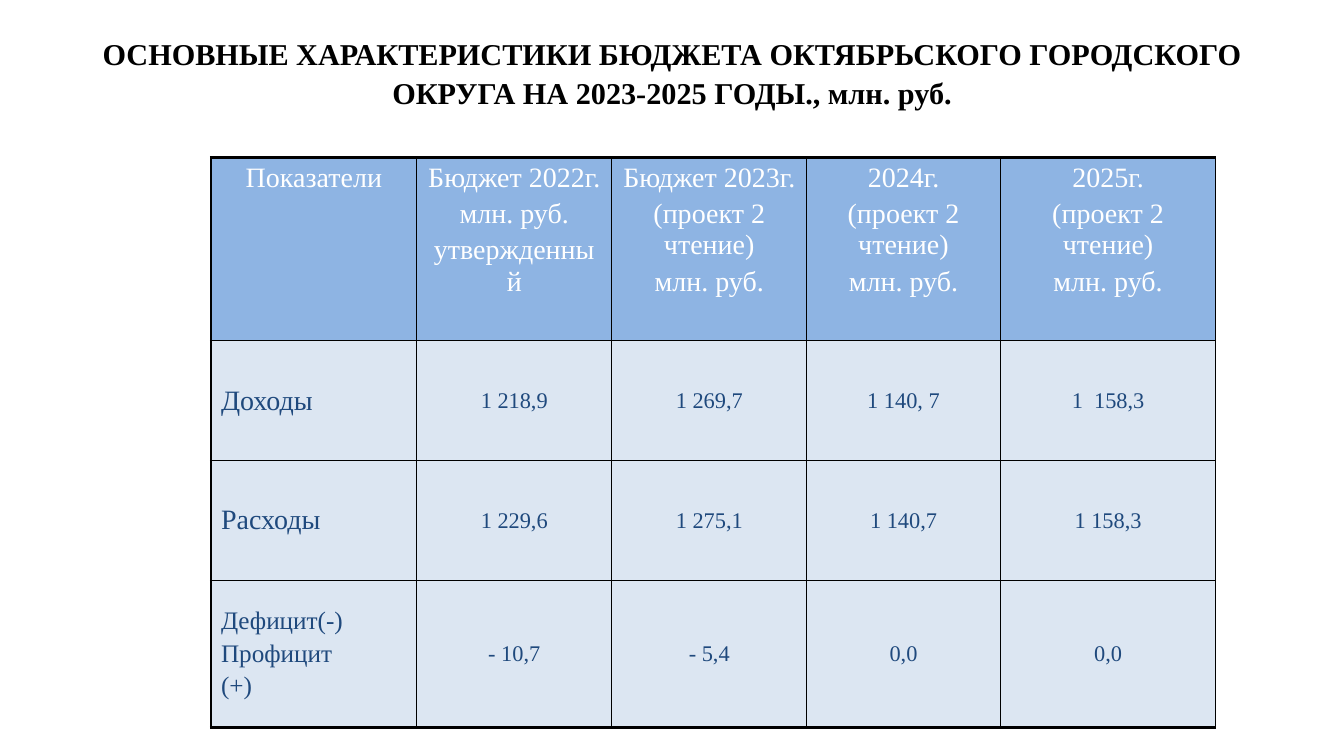
from dataclasses import dataclass

import pptx
import pptx.dml.color
import pptx.enum.text
import pptx.oxml
import pptx.oxml.ns
import pptx.util

Cm = pptx.util.Cm
Pt = pptx.util.Pt
ALIGN = pptx.enum.text.PP_ALIGN
ANCHOR = pptx.enum.text.MSO_ANCHOR


@dataclass(frozen=True)
class Theme:
    font: str = "Times New Roman"
    black: str = "000000"
    white: str = "FFFFFF"
    navy: str = "1F497D"
    header_fill: str = "8EB4E3"
    body_fill: str = "DCE6F2"
    title_size: float = 21.6
    label_size: float = 20
    balance_size: float = 18
    value_size: float = 16
    thin: float = 1
    thick: float = 2.25
    paragraph_gap: float = 0.18  # share of the type size


TITLE = ("ОСНОВНЫЕ ХАРАКТЕРИСТИКИ БЮДЖЕТА ОКТЯБРЬСКОГО ГОРОДСКОГО ОКРУГА "
         "НА 2023-2025 ГОДЫ., млн. руб.")
PROJECT = "\n(проект 2 чтение)\nмлн. руб."
BUDGET_ROWS = [
    ["Показатели", "Бюджет 2022г.\nмлн. руб.\nутвержденный",
     "Бюджет 2023г." + PROJECT, "2024г." + PROJECT, "2025г." + PROJECT],
    ["Доходы", "1 218,9", "1 269,7", "1 140, 7", "1  158,3"],
    ["Расходы", "1 229,6", "1 275,1", "1 140,7", "1 158,3"],
    ["Дефицит(-)\nПрофицит\n(+)", "- 10,7", "- 5,4", "0,0", "0,0"],
]
COLUMN_WIDTHS = [5.18, 4.92, 4.91, 4.88, 5.43]
ROW_HEIGHTS = [4.62, 3.02, 3.01, 3.71]


class SlideBuilder:
    def __init__(self, slide, theme):
        self.slide = slide
        self.theme = theme

    def format_text(self, text_frame, size, color, align, bold=False, gap=0):
        for paragraph in text_frame.paragraphs:
            paragraph.alignment = align
            paragraph.space_before = Pt(size * gap)
            for run in paragraph.runs:
                run.font.name = self.theme.font
                run.font.size = Pt(size)
                run.font.bold = bold
                run.font.color.rgb = pptx.dml.color.RGBColor.from_string(color)

    def add_title(self, text, left, top, width, height):
        box = self.slide.shapes.add_textbox(Cm(left), Cm(top), Cm(width), Cm(height))
        frame = box.text_frame
        frame.word_wrap = True
        frame.vertical_anchor = ANCHOR.MIDDLE
        frame.text = text
        self.format_text(frame, self.theme.title_size, self.theme.black,
                         ALIGN.CENTER, bold=True)
        frame.paragraphs[0].line_spacing = 1.06

    def set_borders(self, cell, widths):
        properties = cell._tc.get_or_add_tcPr()
        for side, width in widths.items():
            properties.append(pptx.oxml.parse_xml(
                f'<a:ln{side} {pptx.oxml.ns.nsdecls("a")} w="{Pt(width)}">'
                f'<a:solidFill><a:srgbClr val="{self.theme.black}"/></a:solidFill>'
                f'</a:ln{side}>'))

    def format_cell(self, cell, row, column, last_row):
        theme = self.theme
        header, label = row == 0, column == 0
        # Heavy rules run along the left, top and bottom of the table
        self.set_borders(cell, {
            "L": theme.thick if label else theme.thin,
            "R": theme.thin,
            "T": theme.thick if header else theme.thin,
            "B": theme.thick if row == last_row else theme.thin,
        })
        cell.fill.solid()
        cell.fill.fore_color.rgb = pptx.dml.color.RGBColor.from_string(
            theme.header_fill if header else theme.body_fill)
        cell.vertical_anchor = ANCHOR.TOP if header else ANCHOR.MIDDLE

        # Plain value cells have narrow margins and no paragraph gap
        compact = not label and 0 < row < last_row
        cell.margin_left = cell.margin_right = Cm(0.18 if compact else 0.25)
        cell.margin_top = cell.margin_bottom = Cm(0 if compact else 0.13)
        if header:
            size = theme.label_size
        elif label:
            size = theme.balance_size if row == last_row else theme.label_size
        else:
            size = theme.value_size
        self.format_text(cell.text_frame, size,
                         theme.white if header else theme.navy,
                         ALIGN.LEFT if label and not header else ALIGN.CENTER,
                         gap=0 if compact else theme.paragraph_gap)

    def add_table(self, rows, left, top, column_widths, row_heights):
        table = self.slide.shapes.add_table(
            len(rows), len(column_widths), Cm(left), Cm(top),
            Cm(sum(column_widths)), Cm(sum(row_heights))).table
        table.first_row = table.horz_banding = False
        for column, width in zip(table.columns, column_widths):
            column.width = Cm(width)
        for row, height in zip(table.rows, row_heights):
            row.height = Cm(height)
        for row, texts in enumerate(rows):
            for column, text in enumerate(texts):
                cell = table.cell(row, column)
                cell.text_frame.text = text
                self.format_cell(cell, row, column, len(rows) - 1)


def main():
    presentation = pptx.Presentation()
    presentation.slide_width = Cm(33.87)
    presentation.slide_height = Cm(19.05)
    slide = presentation.slides.add_slide(presentation.slide_layouts[6])
    builder = SlideBuilder(slide, Theme())

    # Heading
    builder.add_title(TITLE, 1.7, 0.76, 30.48, 2.11)
    # Budget figures
    builder.add_table(BUDGET_ROWS, 5.32, 3.97, COLUMN_WIDTHS, ROW_HEIGHTS)

    presentation.save("out.pptx")


if __name__ == "__main__":
    main()
